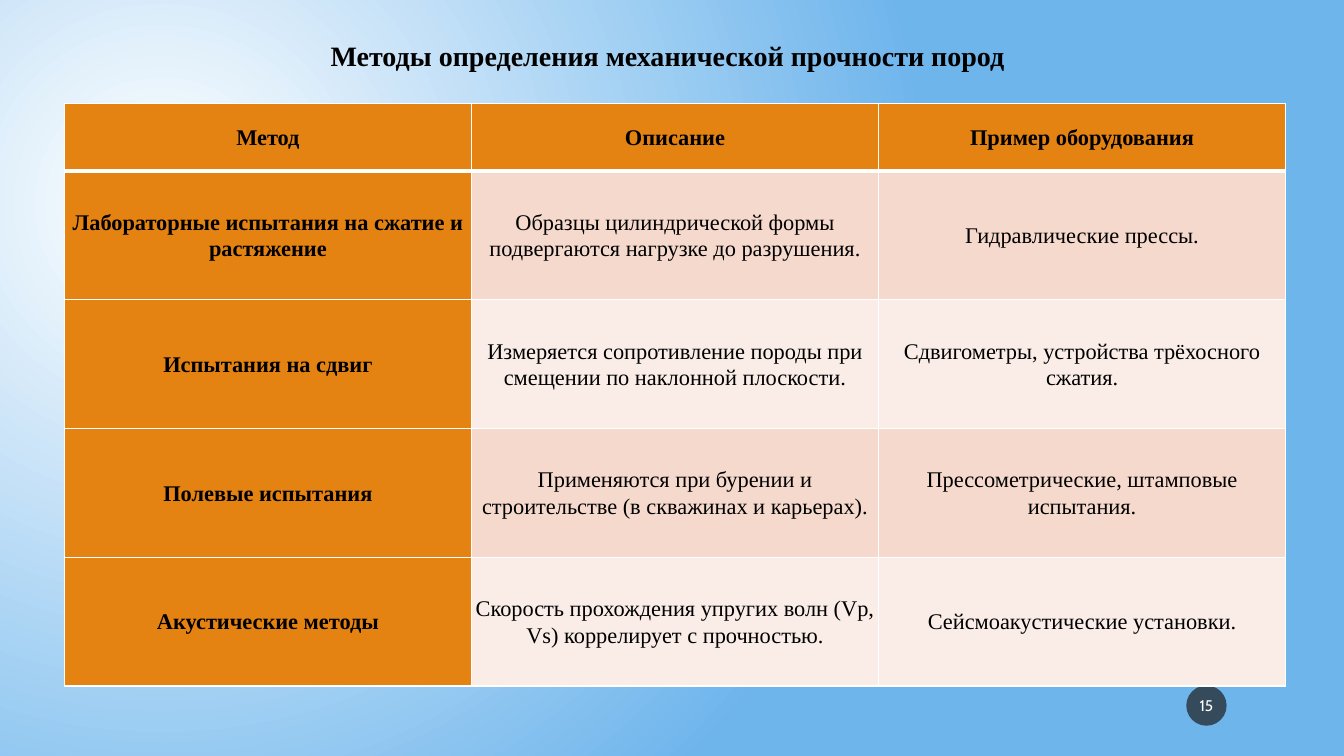
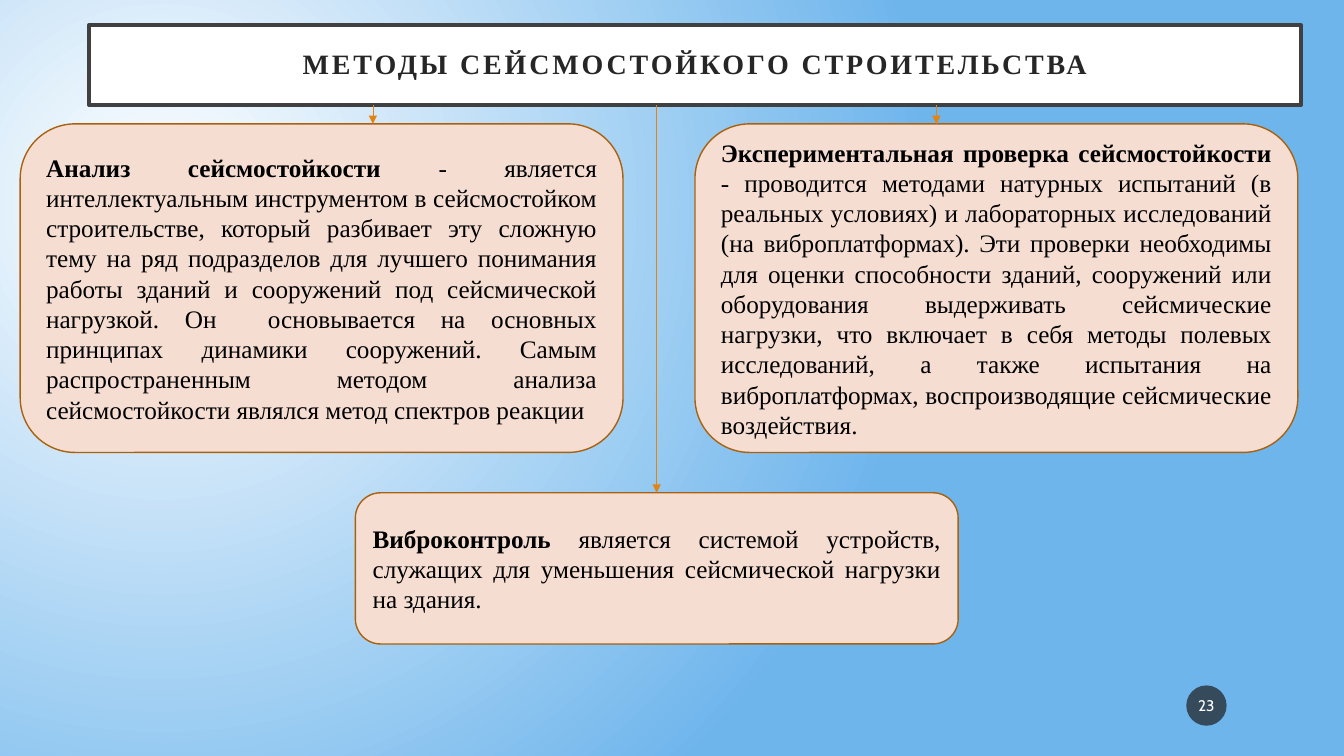
from dataclasses import dataclass

from lxml.etree import SubElement as sub
from pptx import Presentation
from pptx.dml.color import RGBColor
from pptx.enum.shapes import MSO_CONNECTOR as Link, MSO_SHAPE as Form
from pptx.enum.text import MSO_ANCHOR as Anchor, PP_ALIGN as Align
from pptx.oxml.ns import qn
from pptx.util import Pt


@dataclass(frozen=True)
class Theme:
    """Colours, fonts and type sizes of the deck."""
    white: str = "FFFFFF"
    sky: str = "6EB5EC"
    black: str = "000000"
    ink: str = "262626"
    frame: str = "404040"
    dark: str = "1D1D1D"
    orange: str = "E48312"
    brown: str = "A9610D"
    peach: str = "F5DDD2"
    bands: tuple = ("F5D9CC", "FAEDE7")
    serif: str = "Times New Roman"
    sans: str = "Cabin"
    title: int = 20
    body: int = 18
    cell: int = 16
    note: int = 11


@dataclass(frozen=True)
class Box:
    """A rectangle in points."""
    x: float
    y: float
    w: float
    h: float

    def place(self):
        """Return left, top, width and height as lengths."""
        return Pt(self.x), Pt(self.y), Pt(self.w), Pt(self.h)


T = Theme()
WIDE, HIGH = 960, 540
BADGE = Box(847.4, 489.6, 28.8, 28.8)

HEAD = ("Метод", "Описание", "Пример оборудования")
ROWS = (
    ("Лабораторные испытания на сжатие и растяжение",
     "Образцы цилиндрической формы подвергаются нагрузке до разрушения.",
     "Гидравлические прессы."),
    ("Испытания на сдвиг",
     "Измеряется сопротивление породы при смещении по наклонной плоскости.",
     "Сдвигометры, устройства трёхосного сжатия."),
    ("Полевые испытания",
     "Применяются при бурении и строительстве (в скважинах и карьерах).",
     "Прессометрические, штамповые испытания."),
    ("Акустические методы",
     "Скорость прохождения упругих волн (Vp, Vs) коррелирует с прочностью.",
     "Сейсмоакустические установки."),
)
STUDY = (
    ("Анализ сейсмостойкости ", True),
    ("- является интеллектуальным инструментом в сейсмостойком строительстве, "
     "который разбивает эту сложную тему на ряд подразделов для лучшего понимания "
     "работы зданий и сооружений под сейсмической нагрузкой. Он  основывается на "
     "основных принципах динамики сооружений. Самым распространенным методом "
     "анализа сейсмостойкости являлся метод спектров реакции", False),
)
TRIAL = (
    ("Экспериментальная проверка сейсмостойкости ", True),
    ("- проводится методами натурных испытаний (в реальных условиях) и "
     "лабораторных исследований (на виброплатформах). Эти проверки необходимы для "
     "оценки способности зданий, сооружений или оборудования выдерживать "
     "сейсмические нагрузки, что включает в себя методы полевых исследований, а "
     "также испытания на виброплатформах, воспроизводящие сейсмические "
     "воздействия.", False),
)
DAMPER = (
    ("Виброконтроль", True),
    (" является системой устройств, служащих для уменьшения сейсмической нагрузки "
     "на здания.", False),
)


def rgb(code):
    """Turn a hex code into a colour."""
    return RGBColor.from_string(code)


def write(frame, runs, size, align, color=T.black, font=T.serif, space=0):
    """Fill the first paragraph run by run and return it."""
    para = frame.paragraphs[0]
    para.alignment = align
    for text, bold in runs:
        run = para.add_run()
        run.text = text
        run.font.name, run.font.size, run.font.bold = font, Pt(size), bold
        run.font.color.rgb = rgb(color)
        if space:
            run.font._element.set("spc", str(space * 100))
    return para


def inset(part, side, end):
    """Set the side and end margins of a frame or cell."""
    part.margin_left = part.margin_right = Pt(side)
    part.margin_top = part.margin_bottom = Pt(end)


def panel(slide, box, form, fill, line=None, width=1):
    """Add a flat filled shape with wrapped, centred-height text."""
    shape = slide.shapes.add_shape(form, *box.place())
    shape.shadow.inherit = False
    shape.fill.solid()
    shape.fill.fore_color.rgb = rgb(fill)
    if line:
        shape.line.color.rgb = rgb(line)
        shape.line.width = Pt(width)
    else:
        shape.line.fill.background()
    shape.text_frame.word_wrap = True
    shape.text_frame.vertical_anchor = Anchor.MIDDLE
    return shape


def backdrop(master):
    """Give the master its round gradient."""
    fill = master.background.fill
    fill.gradient()
    for stop, code in zip(fill.gradient_stops, (T.white, T.sky)):
        stop.color.rgb = rgb(code)
    grad = master.element.find(".//" + qn("a:gradFill"))
    for lin in grad.findall(qn("a:lin")):
        grad.remove(lin)
    ring = sub(grad, qn("a:path"))
    ring.set("path", "circle")
    focus = sub(ring, qn("a:fillToRect"))
    for side, share in zip("ltrb", (50, 55, 125, 100)):
        focus.set(side, str(share * 1000))


def badge(slide, box, number):
    """Add the round page number."""
    disc = panel(slide, box, Form.OVAL, T.dark)
    tint = disc._element.spPr.find(qn("a:solidFill"))[0]
    sub(tint, qn("a:alpha")).set("val", "70000")
    inset(disc.text_frame, 1.44, 3.6)
    write(disc.text_frame, [(str(number), False)], T.note, Align.CENTER, T.white, T.sans)


def border(cell, top, base):
    """Draw white edges round a cell."""
    props = cell._tc.get_or_add_tcPr()
    for side, width in (("L", 1), ("R", 1), ("T", top), ("B", base)):
        edge = sub(props, qn("a:ln" + side))
        edge.set("w", str(Pt(width)))
        sub(sub(edge, qn("a:solidFill")), qn("a:srgbClr")).set("val", T.white)


def grid(slide, box, head, rows, top):
    """Add the table with a header row and a header column."""
    data = (head, *rows)
    table = slide.shapes.add_table(len(data), len(head), *box.place()).table
    for col in table.columns:
        col.width = Pt(box.w / len(head))
    for r, texts in enumerate(data):
        table.rows[r].height = Pt((box.h - top) / len(rows) if r else top)
        for c, text in enumerate(texts):
            cell = table.cell(r, c)
            key = r == 0 or c == 0
            border(cell, 3 if r == 1 else 1, 1 if r else 3)
            cell.fill.solid()
            cell.fill.fore_color.rgb = rgb(T.orange if key else T.bands[(r - 1) % 2])
            cell.vertical_anchor = Anchor.MIDDLE
            inset(cell, 0.72, 0.72)
            para = write(cell.text_frame, [(text, key)], T.cell, Align.CENTER)
            para.line_spacing = 1.07
            para.space_after = Pt(8)


def label(slide, box, text):
    """Add a plain one-line title."""
    frame = slide.shapes.add_textbox(*box.place()).text_frame
    frame.word_wrap = False
    write(frame, [(text, True)], T.title, Align.LEFT)


def banner(slide, box, text):
    """Add the framed title."""
    shape = panel(slide, box, Form.RECTANGLE, T.white, T.frame, 2.5)
    inset(shape.text_frame, 14.4, 14.4)
    para = write(shape.text_frame, [(text, True)], T.title, Align.CENTER, T.ink, space=2)
    para.line_spacing = 0.9


def card(slide, box, runs):
    """Add a rounded card of justified text."""
    shape = panel(slide, box, Form.ROUNDED_RECTANGLE, T.peach, T.brown)
    write(shape.text_frame, runs, T.body, Align.JUSTIFY)
    return shape


def arrow(slide, x, top, base):
    """Add a thin arrow that points down."""
    line = slide.shapes.add_connector(Link.STRAIGHT, Pt(x), Pt(top), Pt(x), Pt(base))
    line.line.color.rgb = rgb(T.orange)
    line.line.width = Pt(0.5)
    sub(line.line._get_or_add_ln(), qn("a:tailEnd")).set("type", "triangle")
    sub(line._element.spPr, qn("a:effectLst"))
    return line


def survey(slide, box):
    """Lay out the slide of test methods."""
    label(slide, Box(box.x + 229, box.y + 24, 500, 31.5),
          "Методы определения механической прочности пород")
    grid(slide, Box(box.x + 46, box.y + 74, 872.4, 416), HEAD, ROWS, 48)


def scheme(slide, box):
    """Lay out the slide of building methods."""
    bar = Box(box.x + 63.4, box.y + 18, 866, 57)
    banner(slide, bar, "МЕТОДЫ СЕЙСМОСТОЙКОГО СТРОИТЕЛЬСТВА")
    foot = bar.y + bar.h
    wide, gap = 430.6, 51.4
    left = Box(box.x + 14.4, box.y + 88.5, wide, 234.7)
    right = Box(left.x + wide + gap, left.y, wide, left.h)
    low = Box(box.x + 253.8, box.y + 352, wide, 108)
    for spot, runs in ((left, STUDY), (right, TRIAL)):
        card(slide, spot, runs)
    base = card(slide, low, DAMPER)
    for x in (266.4, 668.9):
        arrow(slide, box.x + x, foot, left.y)
    arrow(slide, low.x + wide / 2, foot, low.y).end_connect(base, 0)


def main():
    """Build and save the deck."""
    deck = Presentation()
    deck.slide_width, deck.slide_height = Pt(WIDE), Pt(HIGH)
    backdrop(deck.slide_master)
    for number, draw in ((15, survey), (23, scheme)):
        slide = deck.slides.add_slide(deck.slide_layouts[6])
        badge(slide, BADGE, number)
        draw(slide, Box(0, 0, WIDE, HIGH))
    deck.save("out.pptx")


if __name__ == "__main__":
    main()
